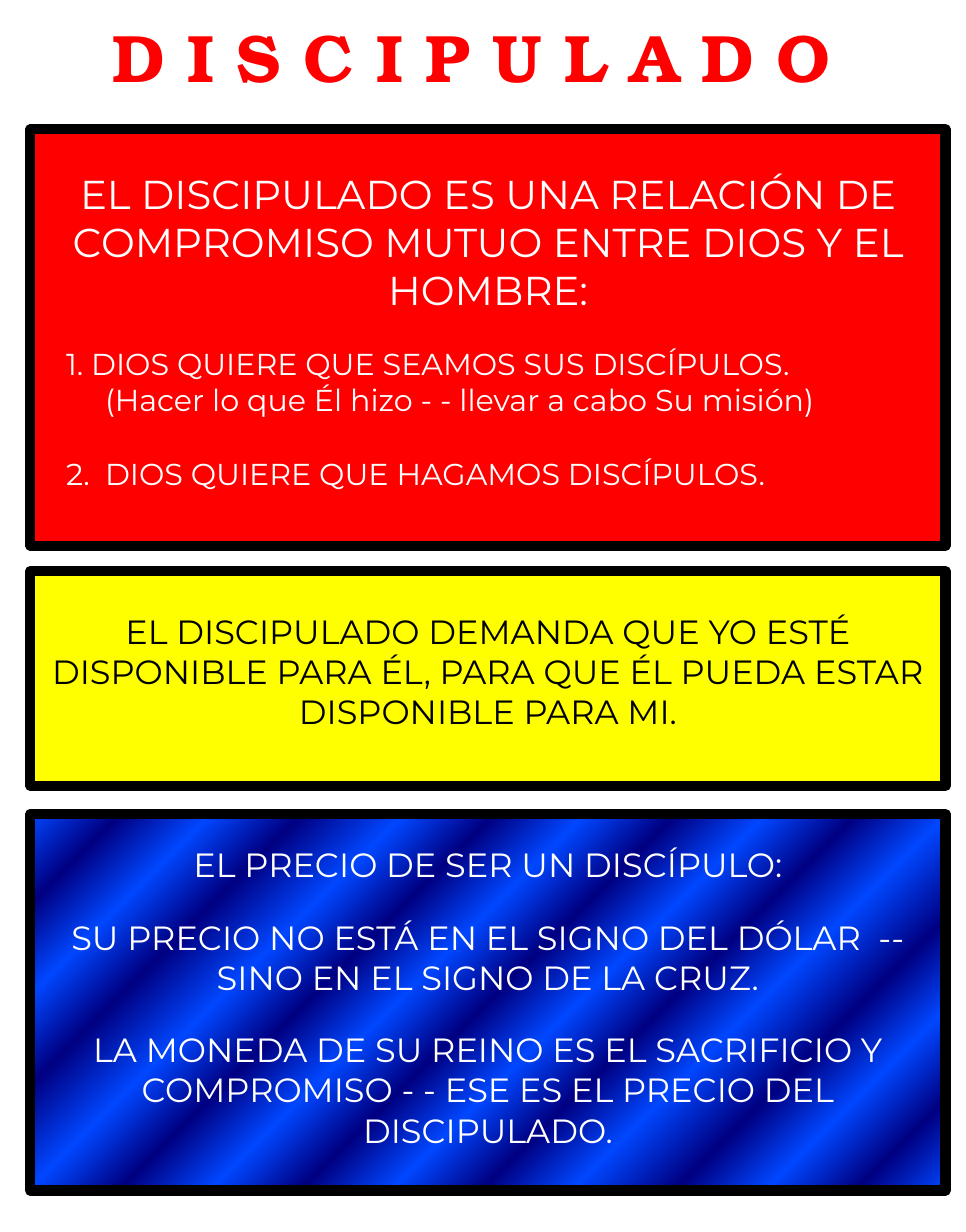
import pptx
import pptx.util
import pptx.dml.color
import pptx.enum.shapes
import pptx.enum.text
import lxml.etree

Cm = pptx.util.Cm
Pt = pptx.util.Pt
RGB = pptx.dml.color.RGBColor
ALIGN = pptx.enum.text.PP_ALIGN
RED = RGB(0xFF, 0x00, 0x00)
YELLOW = RGB(0xFF, 0xFF, 0x00)
BLACK = RGB(0x00, 0x00, 0x00)
WHITE = RGB(0xFF, 0xFF, 0xFF)
BRIGHT = RGB(0x00, 0x47, 0xFF)
NAVY = RGB(0x00, 0x00, 0x82)
BANDS = 14
NS = "{http://schemas.openxmlformats.org/drawingml/2006/main}"


def write(frame, text, size=20, color=WHITE, font="Montserrat", bold=False,
          align=ALIGN.CENTER, gap=0, left=0, hang=0):
    """Add one formatted paragraph to a text frame."""
    par = frame.paragraphs[0]
    if par.runs:
        par = frame.add_paragraph()
    par.alignment = align
    par.space_before = Pt(gap)
    props = par._p.get_or_add_pPr()
    props.set("marL", str(Cm(left)))
    props.set("indent", str(-Cm(hang)))
    run = par.add_run()
    run.text = text
    run.font.size = Pt(size)
    run.font.name = font
    run.font.bold = bold
    run.font.color.rgb = color


def stripe(shape):
    """Fill a shape with even diagonal bands of two blues."""
    shape.fill.gradient()
    grad = shape._element.spPr.find(NS + "gradFill")
    for child in list(grad):
        grad.remove(child)
    stops = lxml.etree.SubElement(grad, NS + "gsLst")
    for i in range(BANDS + 1):
        pos = round(i * 100 / BANDS) * 1000
        stop = lxml.etree.SubElement(stops, NS + "gs", pos=str(pos))
        tone = NAVY if i % 2 else BRIGHT
        lxml.etree.SubElement(stop, NS + "srgbClr", val=str(tone))
    lxml.etree.SubElement(grad, NS + "lin", ang="2700000", scaled="0")


def panel(slide, top, height, inset, fill=None):
    """Draw a black-edged panel, striped if no fill is given, and return its text frame."""
    shape = slide.shapes.add_shape(pptx.enum.shapes.MSO_SHAPE.RECTANGLE,
                                   Cm(0.64), Cm(top), Cm(19.25), Cm(height))
    shape.shadow.inherit = False
    shape.line.color.rgb = BLACK
    shape.line.width = Pt(6)
    if fill is None:
        stripe(shape)
    else:
        shape.fill.solid()
        shape.fill.fore_color.rgb = fill
    frame = shape.text_frame
    frame.word_wrap = True
    frame.vertical_anchor = pptx.enum.text.MSO_ANCHOR.TOP
    frame.margin_top = Cm(inset)
    return frame


def title(slide):
    """Add the heading."""
    box = slide.shapes.add_textbox(Cm(2.11), Cm(0.2), Cm(15.65), Cm(1.9))
    box.text_frame.word_wrap = False
    write(box.text_frame, "D I S C I P U L A D O", size=40, color=RED,
          font="TeX Gyre Bonum", bold=True, align=ALIGN.LEFT)


def main():
    """Build the slide and save it."""
    deck = pptx.Presentation()
    deck.slide_width, deck.slide_height = Cm(20.32), Cm(25.91)
    slide = deck.slides.add_slide(deck.slide_layouts[6])
    title(slide)

    bond = panel(slide, 2.72, 8.76, 0.83, RED)
    write(bond, "EL DISCIPULADO ES UNA RELACIÓN DE COMPROMISO MUTUO ENTRE DIOS Y EL HOMBRE:",
          size=24)
    item = {"size": 18, "align": ALIGN.LEFT}
    write(bond, "1. DIOS QUIERE QUE SEAMOS SUS DISCÍPULOS.", gap=19, left=0.5, **item)
    write(bond, "(Hacer lo que Él hizo - - llevar a cabo Su misión)", left=1.32, **item)
    write(bond, "2.\tDIOS QUIERE QUE HAGAMOS DISCÍPULOS.", gap=22,
          left=1.32, hang=0.82, **item)

    price = panel(slide, 17.12, 7.92, 0.64)
    write(price, "EL PRECIO DE SER UN DISCÍPULO:")
    write(price, "SU PRECIO NO ESTÁ EN EL SIGNO DEL DÓLAR  -- SINO EN EL SIGNO DE LA CRUZ.",
          gap=19)
    write(price, "LA MONEDA DE SU REINO ES EL SACRIFICIO Y COMPROMISO - - "
          "ESE ES EL PRECIO DEL DISCIPULADO.", gap=19)

    call = panel(slide, 12.01, 4.52, 0.83, YELLOW)
    write(call, "EL DISCIPULADO DEMANDA QUE YO ESTÉ DISPONIBLE PARA ÉL, "
          "PARA QUE ÉL PUEDA ESTAR DISPONIBLE PARA MI.", color=BLACK)
    deck.save("out.pptx")


if __name__ == "__main__":
    main()
